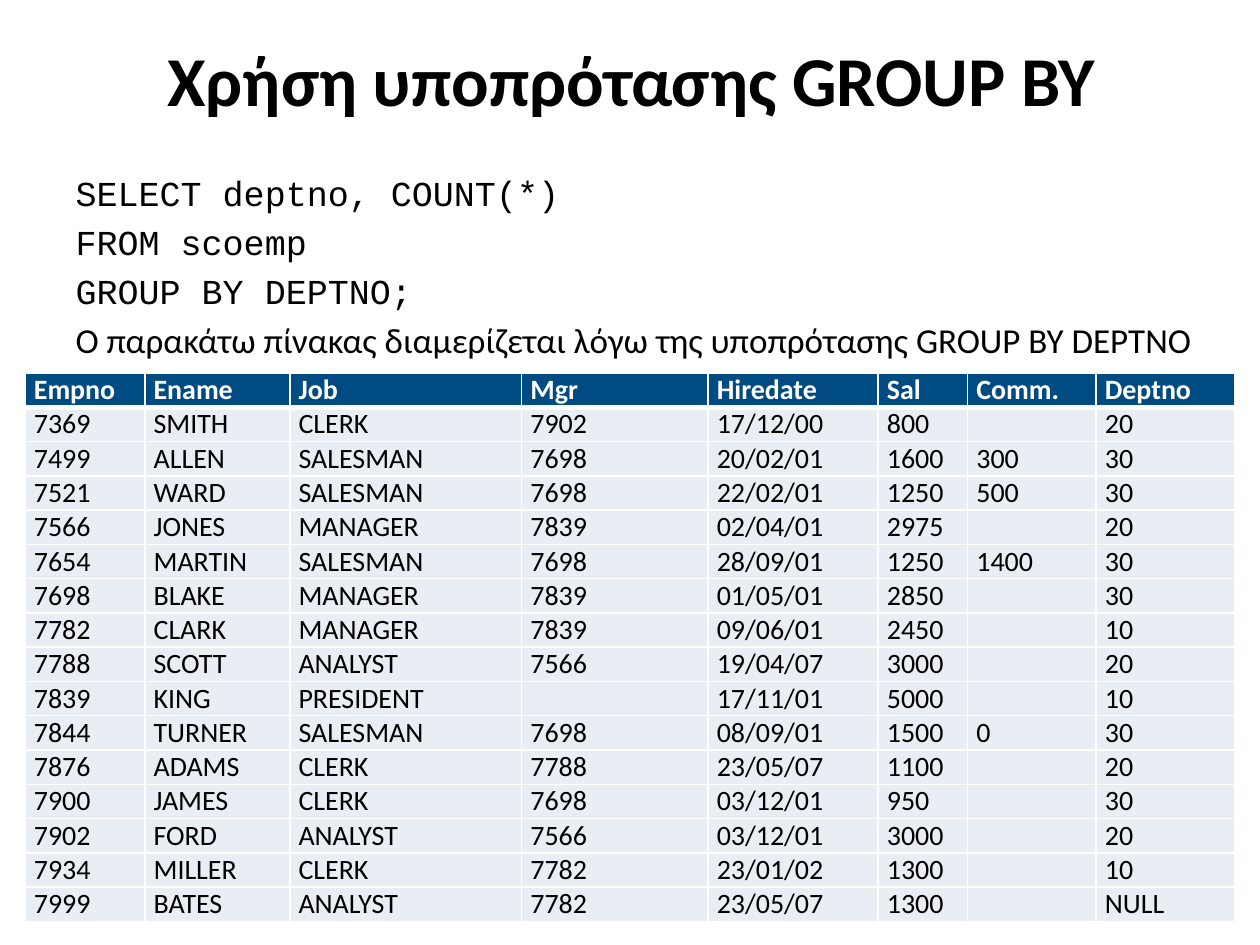
from dataclasses import dataclass

from pptx import Presentation
from pptx.dml.color import RGBColor as RGB
from pptx.enum.text import MSO_ANCHOR as Anchor, MSO_AUTO_SIZE as AutoSize, PP_ALIGN as Align
from pptx.oxml.ns import qn
from pptx.util import Inches, Pt
from lxml.etree import SubElement


@dataclass(frozen=True)
class Theme:
    ink: str = "000000"
    paper: str = "FFFFFF"
    header: str = "004B82"
    row: str = "E9EDF4"
    sans: str = "Calibri"
    mono: str = "Courier New"
    title_size: int = 40
    body_size: int = 20
    cell_size: int = 16
    rule: int = 1
    header_rule: int = 3


class SlideBuilder:
    """Places elements on a grid of 100 columns by 75 rows."""

    COLUMNS, ROWS = 100, 75

    def __init__(self, deck, theme):
        self.deck, self.theme = deck, theme
        self.slide = deck.slides.add_slide(deck.slide_layouts[1])

    def across(self, columns):
        return round(self.deck.slide_width * columns / self.COLUMNS)

    def down(self, rows):
        return round(self.deck.slide_height * rows / self.ROWS)

    def place(self, shape, left, top, width, height):
        shape.left, shape.top = self.across(left), self.down(top)
        shape.width, shape.height = self.across(width), self.down(height)

    def style(self, paragraph, size, face, color, bold=False):
        font = paragraph.font
        font.size, font.name, font.bold = Pt(size), face, bold
        font.color.rgb = RGB.from_string(color)

    def title(self, wording, *box):
        heading = self.slide.shapes.title
        self.place(heading, *box)
        heading.text_frame.text = wording
        heading.text_frame.vertical_anchor = Anchor.MIDDLE
        paragraph = heading.text_frame.paragraphs[0]
        paragraph.alignment = Align.CENTER
        self.style(paragraph, self.theme.title_size, self.theme.sans, self.theme.ink, True)

    def body(self, lines, *box):
        """Fills the body placeholder with unbulleted (wording, face) lines."""
        query = self.slide.placeholders[1]
        self.place(query, *box)
        frame = query.text_frame
        frame.text = "\n".join(wording for wording, _ in lines)
        frame.auto_size = AutoSize.NONE
        for paragraph, (_, face) in zip(frame.paragraphs, lines):
            self.style(paragraph, self.theme.body_size, face, self.theme.ink)
            properties = paragraph._p.get_or_add_pPr()
            properties.set("marL", "0")
            properties.set("indent", "0")
            properties.insert_element_before(
                properties.makeelement(qn("a:buNone")), "a:tabLst", "a:defRPr", "a:extLst")

    def borders(self, cell, bottom):
        properties = cell._tc.get_or_add_tcPr()
        rule = self.theme.rule
        widths = {"a:lnL": rule, "a:lnR": rule, "a:lnT": rule, "a:lnB": bottom}
        for position, (side, width) in enumerate(widths.items()):
            line = properties.makeelement(qn(side), w=str(Pt(width)))
            fill = SubElement(line, qn("a:solidFill"))
            SubElement(fill, qn("a:srgbClr"), val=self.theme.paper)
            properties.insert(position, line)

    def cell(self, cell, wording, is_header):
        theme = self.theme
        cell.margin_left = cell.margin_right = Inches(0.07)
        cell.margin_top = cell.margin_bottom = 0
        cell.fill.solid()
        cell.fill.fore_color.rgb = RGB.from_string(theme.header if is_header else theme.row)
        cell.text = wording
        paragraph = cell.text_frame.paragraphs[0]
        self.style(paragraph, theme.cell_size, theme.sans,
                   theme.paper if is_header else theme.ink, is_header)
        if not wording:  # keeps an empty cell from stretching its row
            SubElement(paragraph._p, qn("a:endParaRPr"), sz=str(theme.cell_size * 100))
        self.borders(cell, theme.header_rule if is_header else theme.rule)

    def table(self, records, left, top, widths, row_height):
        grid = self.slide.shapes.add_table(
            len(records), len(widths), self.across(left), self.down(top),
            self.across(sum(widths)), self.down(row_height * len(records))).table
        grid.horz_banding = False
        for column, width in zip(grid.columns, widths):
            column.width = self.across(width)
        for number, (row, record) in enumerate(zip(grid.rows, records)):
            row.height = self.down(row_height)
            for cell, wording in zip(row.cells, record):
                self.cell(cell, wording, number == 0)


EMPLOYEES = """\
Empno,Ename,Job,Mgr,Hiredate,Sal,Comm.,Deptno
7369,SMITH,CLERK,7902,17/12/00,800,,20
7499,ALLEN,SALESMAN,7698,20/02/01,1600,300,30
7521,WARD,SALESMAN,7698,22/02/01,1250,500,30
7566,JONES,MANAGER,7839,02/04/01,2975,,20
7654,MARTIN,SALESMAN,7698,28/09/01,1250,1400,30
7698,BLAKE,MANAGER,7839,01/05/01,2850,,30
7782,CLARK,MANAGER,7839,09/06/01,2450,,10
7788,SCOTT,ANALYST,7566,19/04/07,3000,,20
7839,KING,PRESIDENT,,17/11/01,5000,,10
7844,TURNER,SALESMAN,7698,08/09/01,1500,0,30
7876,ADAMS,CLERK,7788,23/05/07,1100,,20
7900,JAMES,CLERK,7698,03/12/01,950,,30
7902,FORD,ANALYST,7566,03/12/01,3000,,20
7934,MILLER,CLERK,7782,23/01/02,1300,,10
7999,BATES,ANALYST,7782,23/05/07,1300,,NULL"""


def main():
    deck = Presentation()
    deck.slide_width, deck.slide_height = Inches(10), Inches(7.5)
    theme = Theme()
    page = SlideBuilder(deck, theme)
    page.title("Χρήση υποπρότασης GROUP BY", 5.1, 1.3, 90, 9.9)
    page.body([
        ("SELECT deptno, COUNT(*)", theme.mono),
        ("FROM scoemp", theme.mono),
        ("GROUP BY DEPTNO;", theme.mono),
        ("Ο παρακάτω πίνακας διαμερίζεται λόγω της υποπρότασης GROUP BY DEPTNO", theme.sans),
    ], 5, 13.1, 95, 17.3)
    records = [line.split(",") for line in EMPLOYEES.splitlines()]
    page.table(records, 2, 29.6, [9.5, 11.5, 18.4, 14.8, 13.5, 7.1, 10.2, 11], 2.67)
    deck.save("out.pptx")


if __name__ == "__main__":
    main()
